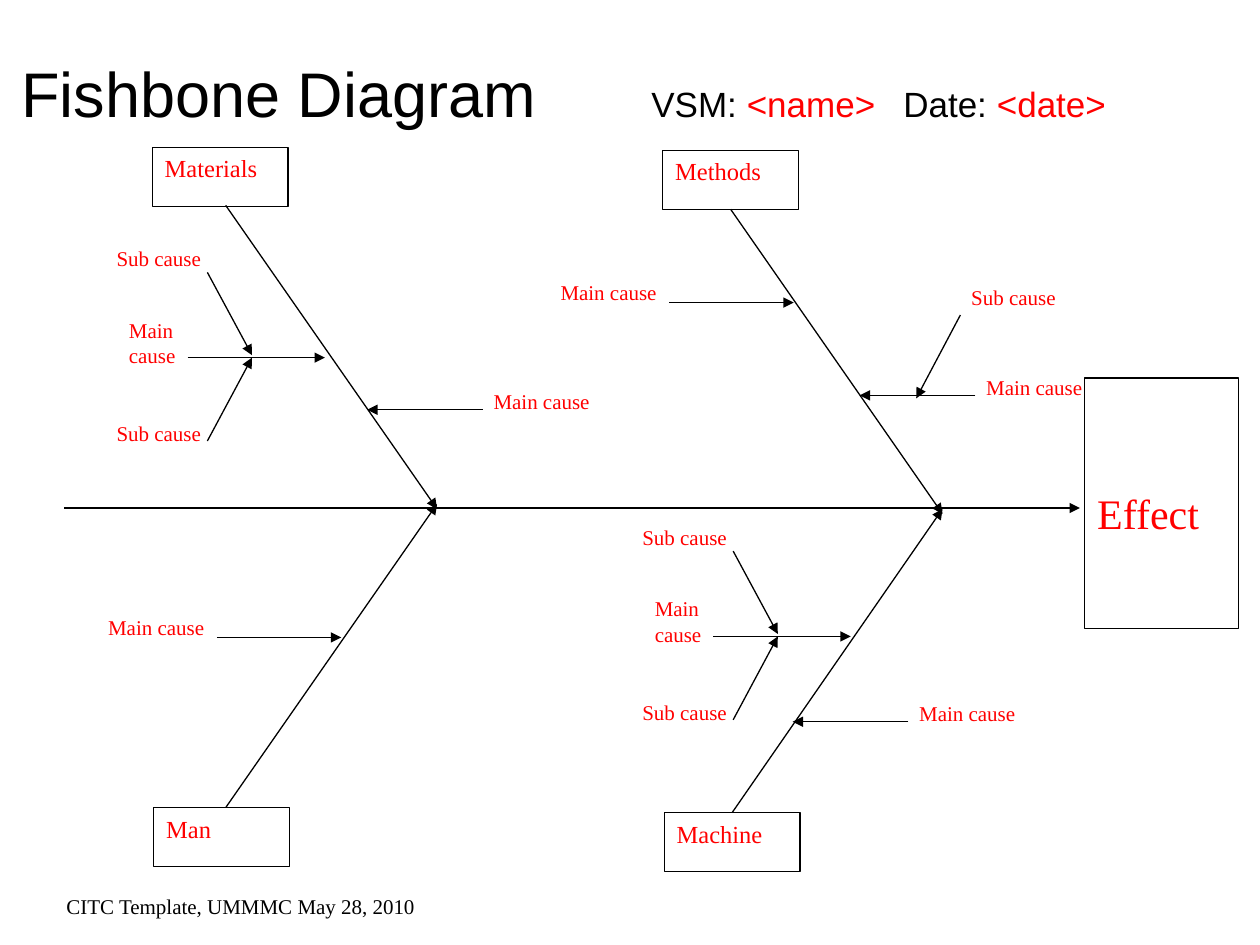
from dataclasses import dataclass

from lxml.etree import SubElement
from pptx import Presentation
from pptx.dml.color import RGBColor
from pptx.enum.shapes import MSO_CONNECTOR as Connector, MSO_SHAPE as Shape
from pptx.enum.text import MSO_ANCHOR as Anchor, PP_ALIGN as Align
from pptx.oxml.ns import qn
from pptx.slide import Slide
from pptx.util import Cm, Pt

BLACK = RGBColor(0, 0, 0)
RED = RGBColor(255, 0, 0)


@dataclass
class Fishbone:
    """Draw the parts of a fishbone diagram, measured in centimetres."""

    slide: Slide
    serif: str = "Times New Roman"
    sans: str = "Arial"
    line_width: float = 0.75

    def set_text(self, shape, text, size, color):
        shape.text_frame.word_wrap = True
        paragraph = shape.text_frame.paragraphs[0]
        paragraph.text = text
        paragraph.alignment = Align.LEFT
        paragraph.font.name = self.serif
        paragraph.font.size = Pt(size)
        paragraph.font.color.rgb = color

    def label(self, text, x, y, width=2.49, height=1.04, size=12, color=RED):
        box = self.slide.shapes.add_textbox(Cm(x), Cm(y), Cm(width), Cm(height))
        self.set_text(box, text, size, color)

    def box(self, x, y, width, height, text=""):
        shape = self.slide.shapes.add_shape(Shape.RECTANGLE, Cm(x), Cm(y), Cm(width), Cm(height))
        shape.shadow.inherit = False
        shape.fill.background()
        shape.line.color.rgb = BLACK
        shape.line.width = Pt(self.line_width)
        if text:
            shape.text_frame.vertical_anchor = Anchor.TOP
            self.set_text(shape, text, 14, RED)
        return shape

    def arrow(self, x1, y1, x2, y2):
        connector = self.slide.shapes.add_connector(
            Connector.STRAIGHT, Cm(x1), Cm(y1), Cm(x2), Cm(y2))
        connector.line.color.rgb = BLACK
        connector.line.width = Pt(self.line_width)
        properties = connector.element.spPr
        SubElement(properties.get_or_add_ln(), qn("a:tailEnd"), type="triangle")
        SubElement(properties, qn("a:effectLst"))
        return connector

    def cause_from_left(self, x, y):
        self.label("Main cause", x - 2.44, y - 0.58)
        self.arrow(x, y, x + 2.51, y)

    def cause_from_right(self, x, y):
        self.label("Main cause", x - 0.03, y - 0.55)
        self.arrow(x, y, x - 2.33, y)

    def cause_with_subs(self, x, y):
        self.arrow(x, y, x + 2.77, y)
        self.label("Main cause", x - 1.43, y - 0.94, 1.57, 1.73)
        for label_y, start_y, end_y in ((-2.39, -1.72, -0.05), (1.14, 1.68, 0)):
            self.label("Sub cause", x - 1.68, y + label_y, 2.36)
            self.arrow(x + 0.4, y + start_y, x + 1.3, y + end_y)

    def title(self, parts, tab_stops, x, y, width, height):
        box = self.slide.shapes.add_textbox(Cm(x), Cm(y), Cm(width), Cm(height))
        box.text_frame.word_wrap = True
        box.text_frame.vertical_anchor = Anchor.BOTTOM
        paragraph = box.text_frame.paragraphs[0]
        tabs = SubElement(paragraph._p.get_or_add_pPr(), qn("a:tabLst"))
        for stop in tab_stops:
            SubElement(tabs, qn("a:tab"), pos=str(Cm(stop)), algn="l")
        paragraph.font.name = self.sans
        for text, size, color in parts:
            run = paragraph.add_run()
            run.text = text
            run.font.size = Pt(size)
            run.font.color.rgb = color


def main():
    presentation = Presentation()
    presentation.slide_width, presentation.slide_height = Cm(25.4), Cm(19.05)
    fishbone = Fishbone(presentation.slides.add_slide(presentation.slide_layouts[6]))

    fishbone.title(
        [("Fishbone Diagram", 36, BLACK), ("\tVSM: ", 20, BLACK), ("<name>\t", 20, RED),
         ("Date: ", 20, BLACK), ("<date>", 20, RED)],
        (12.7, 17.78), 0.18, 0.71, 25.02, 2.03)

    fishbone.arrow(1.3, 10.24, 21.77, 10.24)
    fishbone.label("Effect", 21.87, 9.7, 3.1, 1.3, size=24)
    fishbone.box(21.87, 7.62, 3.1, 5.05)

    for text, x, y, bone, side in (
        ("Materials", 3.07, 2.97, (4.55, 4.14, 8.81, 10.26), None),
        ("Man", 3.1, 16.28, (4.55, 16.28, 8.81, 10.16), None),
        ("Methods", 13.36, 3.03, (14.73, 4.22, 19, 10.36), 2),
        ("Machine", 13.39, 16.38, (14.76, 16.38, 19, 10.26), 0),
    ):
        category = fishbone.box(x, y, 2.74, 1.19, text)
        arrow = fishbone.arrow(*bone)
        if side is not None:
            arrow.begin_connect(category, side)

    for x, y in ((3.78, 7.21), (14.38, 12.83)):
        fishbone.cause_with_subs(x, y)
    for x, y in ((4.37, 12.85), (13.49, 6.1)):
        fishbone.cause_from_left(x, y)
    for x, y in ((9.73, 8.26), (19.66, 7.97), (18.31, 14.55)):
        fishbone.cause_from_right(x, y)

    fishbone.label("Sub cause", 19.33, 5.61, 2.36)
    fishbone.arrow(19.36, 6.35, 18.47, 8.03)
    fishbone.label("CITC Template, UMMMC May 28, 2010", 1.09, 17.88, 7.59, 0.76, color=BLACK)

    presentation.save("out.pptx")


if __name__ == "__main__":
    main()
